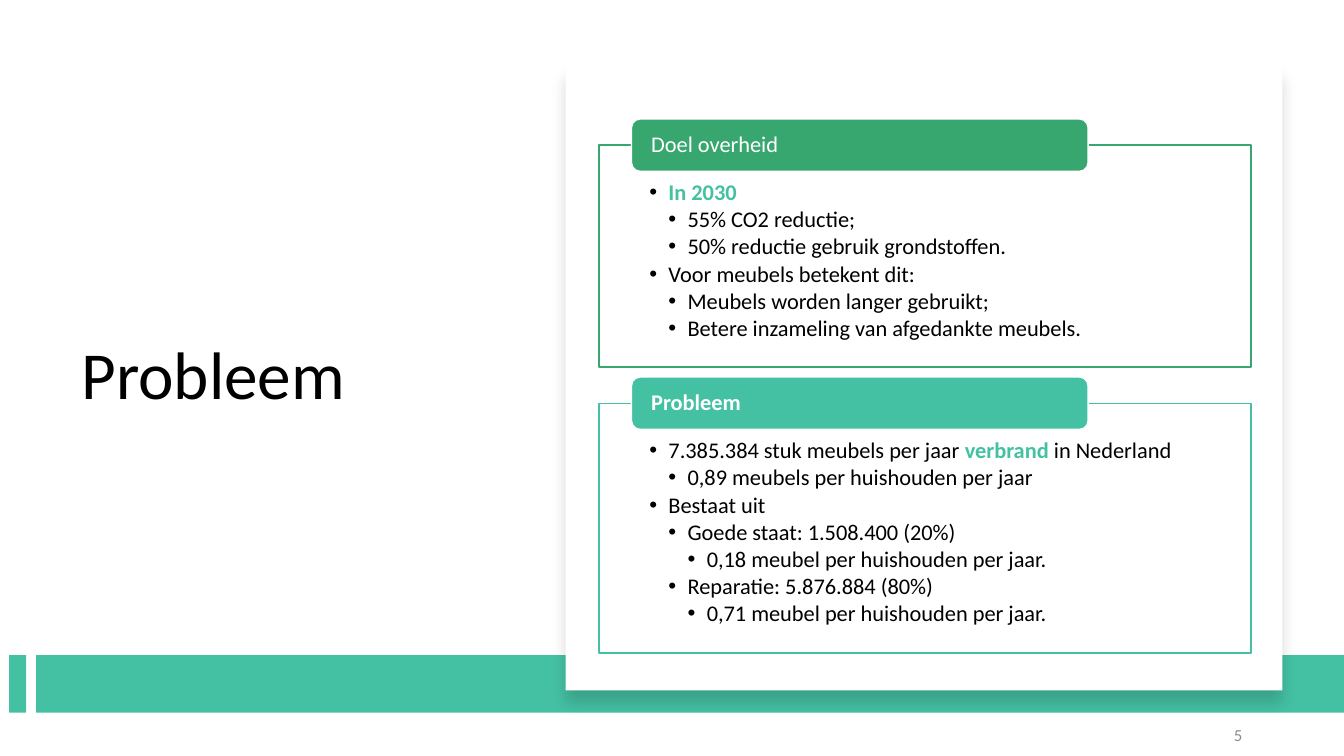
from dataclasses import dataclass

from lxml import etree
from pptx import Presentation
from pptx import util as u
from pptx.dml.color import RGBColor
from pptx.enum import shapes, text
from pptx.oxml import ns

WIDTH, HEIGHT = 13.33, 7.5


@dataclass(frozen=True)
class Theme:
    font: str = "Calibri"
    teal: str = "44C1A3"
    green: str = "37A76F"
    white: str = "FFFFFF"
    black: str = "000000"
    grey: str = "8C8C8C"
    title_size: int = 48
    body_size: int = 16
    number_size: int = 12
    line_spacing: float = 0.9
    indent: float = 0.19


THEME = Theme()

# Each item is (level, pieces); each piece is (wording, highlighted).
GOALS = [
    (1, [("In 2030", True)]),
    (2, [("55% CO2 reductie;", False)]),
    (2, [("50% reductie gebruik grondstoffen.", False)]),
    (1, [("Voor meubels betekent dit:", False)]),
    (2, [("Meubels worden langer gebruikt;", False)]),
    (2, [("Betere inzameling van afgedankte meubels.", False)]),
]
PROBLEMS = [
    (1, [("7.385.384 stuk meubels per jaar ", False), ("verbrand", True),
         (" in Nederland", False)]),
    (2, [("0,89 meubels per huishouden per jaar", False)]),
    (1, [("Bestaat uit", False)]),
    (2, [("Goede staat: 1.508.400 (20%)", False)]),
    (3, [("0,18 meubel per huishouden per jaar.", False)]),
    (2, [("Reparatie: 5.876.884 (80%)", False)]),
    (3, [("0,71 meubel per huishouden per jaar.", False)]),
]


def rgb(color):
    return RGBColor.from_string(color)


def inches(box):
    return [u.Inches(length) for length in box]


def add_block(slide, box, fill, line=None, kind=shapes.MSO_SHAPE.RECTANGLE):
    shape = slide.shapes.add_shape(kind, *inches(box))
    shape.shadow.inherit = False
    shape.fill.solid()
    shape.fill.fore_color.rgb = rgb(fill)
    if line:
        shape.line.color.rgb = rgb(line)
        shape.line.width = u.Pt(1)
    else:
        shape.line.fill.background()
    return shape


def set_frame(shape, insets, anchor):
    frame = shape.text_frame
    frame.word_wrap = True
    frame.vertical_anchor = anchor
    (frame.margin_left, frame.margin_top,
     frame.margin_right, frame.margin_bottom) = inches(insets)
    return frame


def style_run(run, size, color, bold=False):
    run.font.name = THEME.font
    run.font.size = u.Pt(size)
    run.font.color.rgb = rgb(color)
    run.font.bold = bold


def write_line(shape, wording, size, color, align=text.PP_ALIGN.LEFT,
               bold=False, insets=(0.1, 0.05, 0.1, 0.05)):
    frame = set_frame(shape, insets, text.MSO_ANCHOR.MIDDLE)
    frame.text = wording
    paragraph = frame.paragraphs[0]
    paragraph.alignment = align
    paragraph.line_spacing = THEME.line_spacing
    style_run(paragraph.runs[0], size, color, bold)


def set_bullet(paragraph, level):
    properties = paragraph._p.get_or_add_pPr()
    properties.set("marL", str(u.Inches(THEME.indent * level)))
    properties.set("indent", str(-u.Inches(THEME.indent)))
    color = etree.SubElement(properties, ns.qn("a:buClr"))
    etree.SubElement(color, ns.qn("a:srgbClr"), val=THEME.black)
    etree.SubElement(properties, ns.qn("a:buFont"), typeface="Arial")
    etree.SubElement(properties, ns.qn("a:buChar"), char="•")


def write_bullets(shape, items):
    frame = set_frame(shape, (0.5, 0.36, 0.5, 0.12), text.MSO_ANCHOR.TOP)
    for index, (level, pieces) in enumerate(items):
        paragraph = frame.add_paragraph() if index else frame.paragraphs[0]
        paragraph.alignment = text.PP_ALIGN.LEFT
        paragraph.level = level - 1
        paragraph.line_spacing = THEME.line_spacing
        paragraph.space_after = u.Pt(2.1)
        set_bullet(paragraph, level)
        for wording, highlighted in pieces:
            run = paragraph.add_run()
            run.text = wording
            color = THEME.teal if highlighted else THEME.black
            style_run(run, THEME.body_size, color, highlighted)


def add_drop_shadow(shape):
    effects = shape._element.spPr.find(ns.qn("a:effectLst"))
    shadow = etree.SubElement(
        effects, ns.qn("a:outerShdw"), blurRad=str(u.Pt(11)),
        dist=str(u.Pt(10)), dir="5400000", algn="t", rotWithShape="0")
    color = etree.SubElement(shadow, ns.qn("a:srgbClr"), val=THEME.black)
    etree.SubElement(color, ns.qn("a:alpha"), val="15000")


def add_footer_band(slide, box):
    """Draw a short and a long bar, side by side."""
    left, top, width, height = box
    short, gap = 0.17, 0.1
    long_left = short + gap
    for offset, length in ((0, short), (long_left, width - long_left)):
        add_block(slide, (left + offset, top, length, height), THEME.teal)


def add_section(slide, box, heading, items, color, bold=False):
    """Draw an outlined bullet list with a heading tab over its top edge."""
    left, top, width, height = box
    tab_height = 0.52
    write_bullets(add_block(slide, box, THEME.white, color), items)
    tab_box = (left + 0.05 * width, top - tab_height / 2,
               0.7 * width, tab_height)
    tab = add_block(slide, tab_box, color, THEME.white,
                    shapes.MSO_SHAPE.ROUNDED_RECTANGLE)
    write_line(tab, heading, THEME.body_size, THEME.white, bold=bold,
               insets=(0.17, 0, 0.17, 0))


def add_card(slide, box):
    left, top, width, height = box
    add_drop_shadow(add_block(slide, box, THEME.white))
    margin = 0.33
    inner_left, inner_width = left + margin, width - 2 * margin + 0.02
    add_section(slide, (inner_left, top + 0.8, inner_width, 2.2),
                "Doel overheid", GOALS, THEME.green)
    add_section(slide, (inner_left, top + 3.36, inner_width, 2.48),
                "Probleem", PROBLEMS, THEME.teal, bold=True)


def build_problem_slide(presentation):
    slide = presentation.slides.add_slide(presentation.slide_layouts[6])
    title = slide.shapes.add_textbox(*inches((0.71, 1.2, 4.15, 5.1)))
    write_line(title, "Probleem", THEME.title_size, THEME.black)
    add_footer_band(slide, (0.09, 6.5, WIDTH - 0.09, 0.57))
    add_card(slide, (5.61, 0.64, 7.11, 6.21))
    number = slide.shapes.add_textbox(*inches((9.42, 7.1, 3, 0.4)))
    write_line(number, "5", THEME.number_size, THEME.grey,
               text.PP_ALIGN.RIGHT)


def main():
    presentation = Presentation()
    presentation.slide_width = u.Inches(WIDTH)
    presentation.slide_height = u.Inches(HEIGHT)
    build_problem_slide(presentation)
    presentation.save("out.pptx")


if __name__ == "__main__":
    main()
